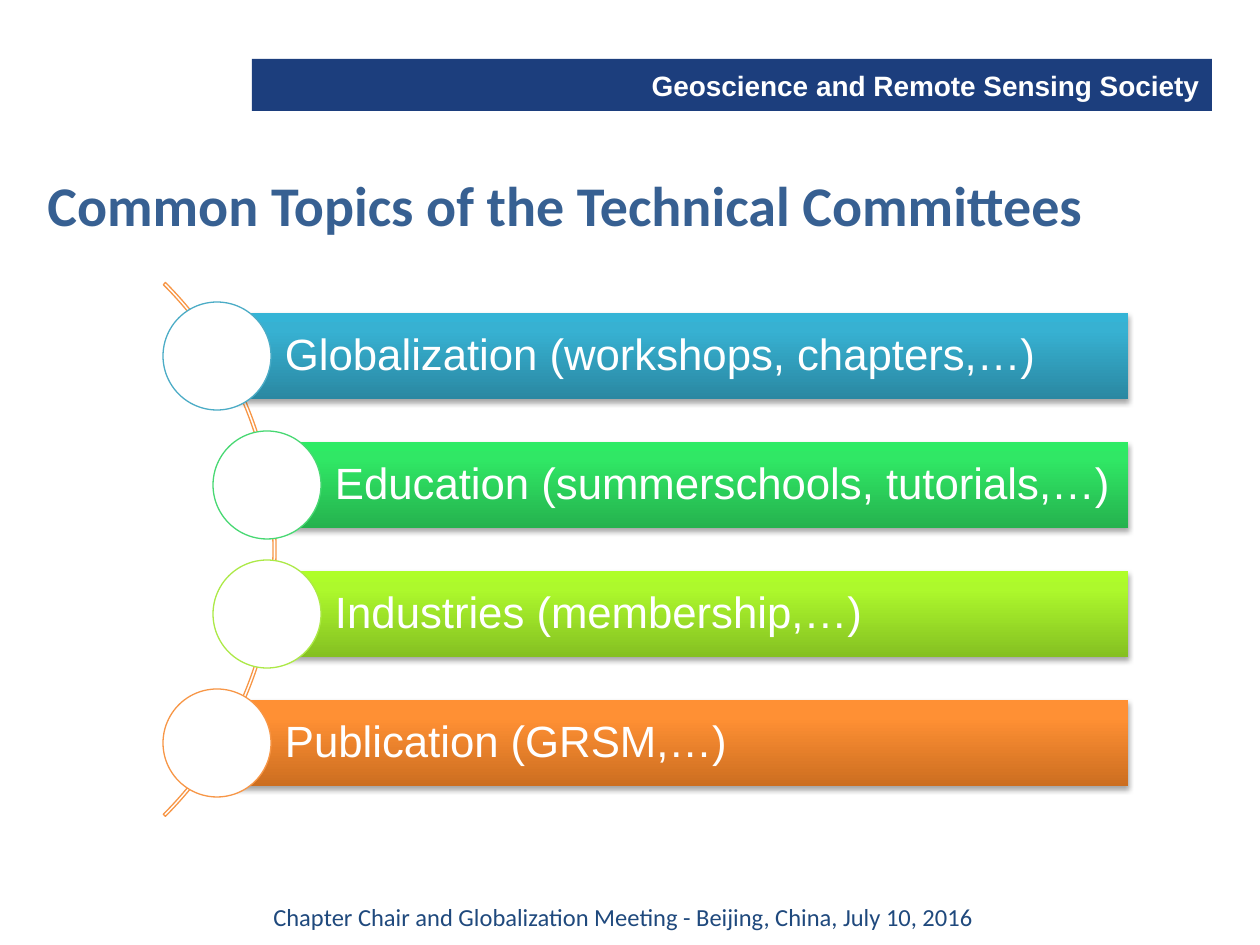
from copy import deepcopy
from dataclasses import dataclass

from lxml import etree
from pptx import Presentation
from pptx import util as u
from pptx.dml.color import RGBColor
from pptx.enum import shapes, text
from pptx.oxml import ns

EMU_PER_PX = 914400 / 126
COLORS = {
    "navy": "1C3E7D", "title": "376092", "footer": "1F497D",
    "white": "FFFFFF", "orange": "F79646", "shadow": "000000",
}
GRADIENT_POSITIONS = (0, 0.8, 1)
FIRST_BAR_TOP, BAR_STEP, BAR_HEIGHT, BAR_RIGHT = 313, 129, 86, 1128
CIRCLE_SIZE = 108


@dataclass(frozen=True)
class Box:
    left: int
    top: int
    width: int
    height: int

    def emu(self) -> tuple:
        return tuple(px(v) for v in (self.left, self.top, self.width, self.height))


@dataclass(frozen=True)
class Topic:
    label: str
    center_x: int
    outline: str
    gradient: tuple


@dataclass(frozen=True)
class Style:
    size: int
    font: str
    color: str
    bold: bool = False
    align: text.PP_ALIGN = text.PP_ALIGN.LEFT


TOPICS = (
    Topic("Globalization (workshops, chapters,…)", 217, "4BACC6",
          ("2A88A2", "37B1D2", "34B4D6")),
    Topic("Education (summerschools, tutorials,…)", 267, "47D872",
          ("25B24E", "30E765", "2DEB64")),
    Topic("Industries (membership,…)", 267, "ACE946",
          ("85C022", "ADF92C", "AFFE28")),
    Topic("Publication (GRSM,…)", 217, COLORS["orange"],
          ("CC6E20", "FF9034", "FF9136")),
)
TOPIC_STYLE = Style(25, "Arial", COLORS["white"])


def px(value: int) -> u.Emu:
    return u.Emu(round(value * EMU_PER_PX))


def rgb(color: str) -> RGBColor:
    return RGBColor.from_string(color)


def write(shape, words: str, style: Style, wrap: bool = True):
    frame = shape.text_frame
    frame.word_wrap = wrap
    paragraph = frame.paragraphs[0]
    paragraph.text = words
    paragraph.alignment = style.align
    font = paragraph.font
    font.size, font.name, font.bold = u.Pt(style.size), style.font, style.bold
    font.color.rgb = rgb(style.color)
    return frame


def add_shape(slide, kind, box: Box, fill: str = "", outline: str = ""):
    shape = slide.shapes.add_shape(kind, *box.emu())
    shape.shadow.inherit = False
    if fill:
        shape.fill.solid()
        shape.fill.fore_color.rgb = rgb(fill)
    else:
        shape.fill.background()
    if outline:
        shape.line.color.rgb = rgb(outline)
        shape.line.width = u.Pt(0.75)
    else:
        shape.line.fill.background()
    return shape


def add_text(slide, box: Box, words: str, style: Style, wrap: bool = True) -> None:
    write(slide.shapes.add_textbox(*box.emu()), words, style, wrap)


def set_gradient(shape, colors: tuple) -> None:
    shape.fill.gradient()
    shape.fill.gradient_angle = 90
    stop_list = shape.element.spPr.find(".//" + ns.qn("a:gsLst"))
    stop_list.append(deepcopy(stop_list[-1]))
    for stop, color, position in zip(shape.fill.gradient_stops, colors, GRADIENT_POSITIONS):
        stop.color.rgb = rgb(color)
        stop.position = position


def set_shadow(shape) -> None:
    effects = shape.element.spPr.find(ns.qn("a:effectLst"))
    shadow = etree.SubElement(effects, ns.qn("a:outerShdw"), blurRad=str(u.Pt(3.1)),
                              dist=str(u.Pt(1.8)), dir="5400000", rotWithShape="0")
    color = etree.SubElement(shadow, ns.qn("a:srgbClr"), val=COLORS["shadow"])
    etree.SubElement(color, ns.qn("a:alpha"), val="35000")


def add_topic(slide, topic: Topic, top: int) -> None:
    bar_box = Box(topic.center_x, top, BAR_RIGHT - topic.center_x, BAR_HEIGHT)
    bar = add_shape(slide, shapes.MSO_SHAPE.RECTANGLE, bar_box)
    set_gradient(bar, topic.gradient)
    set_shadow(bar)
    frame = write(bar, topic.label, TOPIC_STYLE)
    frame.vertical_anchor = text.MSO_ANCHOR.MIDDLE
    frame.margin_left = px(68)
    frame.margin_right = frame.margin_top = frame.margin_bottom = px(9)
    frame.paragraphs[0].line_spacing = 0.9

    radius = CIRCLE_SIZE // 2
    circle_box = Box(topic.center_x - radius, top + BAR_HEIGHT // 2 - radius,
                     CIRCLE_SIZE, CIRCLE_SIZE)
    add_shape(slide, shapes.MSO_SHAPE.OVAL, circle_box, COLORS["white"], topic.outline)


def main() -> None:
    presentation = Presentation()
    presentation.slide_width, presentation.slide_height = px(1260), px(945)
    slide = presentation.slides.add_slide(presentation.slide_layouts[6])

    # Society banner
    banner = add_shape(slide, shapes.MSO_SHAPE.RECTANGLE, Box(252, 59, 960, 52), COLORS["navy"])
    frame = write(banner, "Geoscience and Remote Sensing Society",
                  Style(16, "Arial", COLORS["white"], True, text.PP_ALIGN.RIGHT))
    frame.vertical_anchor = text.MSO_ANCHOR.MIDDLE

    # Curve behind the topics
    arc = add_shape(slide, shapes.MSO_SHAPE.BLOCK_ARC, Box(-479, 172, 755, 755),
                    outline=COLORS["orange"])
    # Start and end angles (315 and 45 degrees), then thickness
    for index, value in enumerate((189, 27, 0.004)):
        arc.adjustments[index] = value

    # Topic bars with circles
    for row, topic in enumerate(TOPICS):
        add_topic(slide, topic, FIRST_BAR_TOP + row * BAR_STEP)

    # Title and footer
    add_text(slide, Box(35, 164, 1131, 81), "Common Topics of the Technical Committees",
             Style(32, "Calibri", COLORS["title"], True))
    add_text(slide, Box(257, 896, 733, 43),
             "Chapter Chair and Globalization Meeting - Beijing, China, July 10, 2016",
             Style(14, "Calibri", COLORS["footer"], align=text.PP_ALIGN.CENTER), wrap=False)

    presentation.save("out.pptx")


if __name__ == "__main__":
    main()
